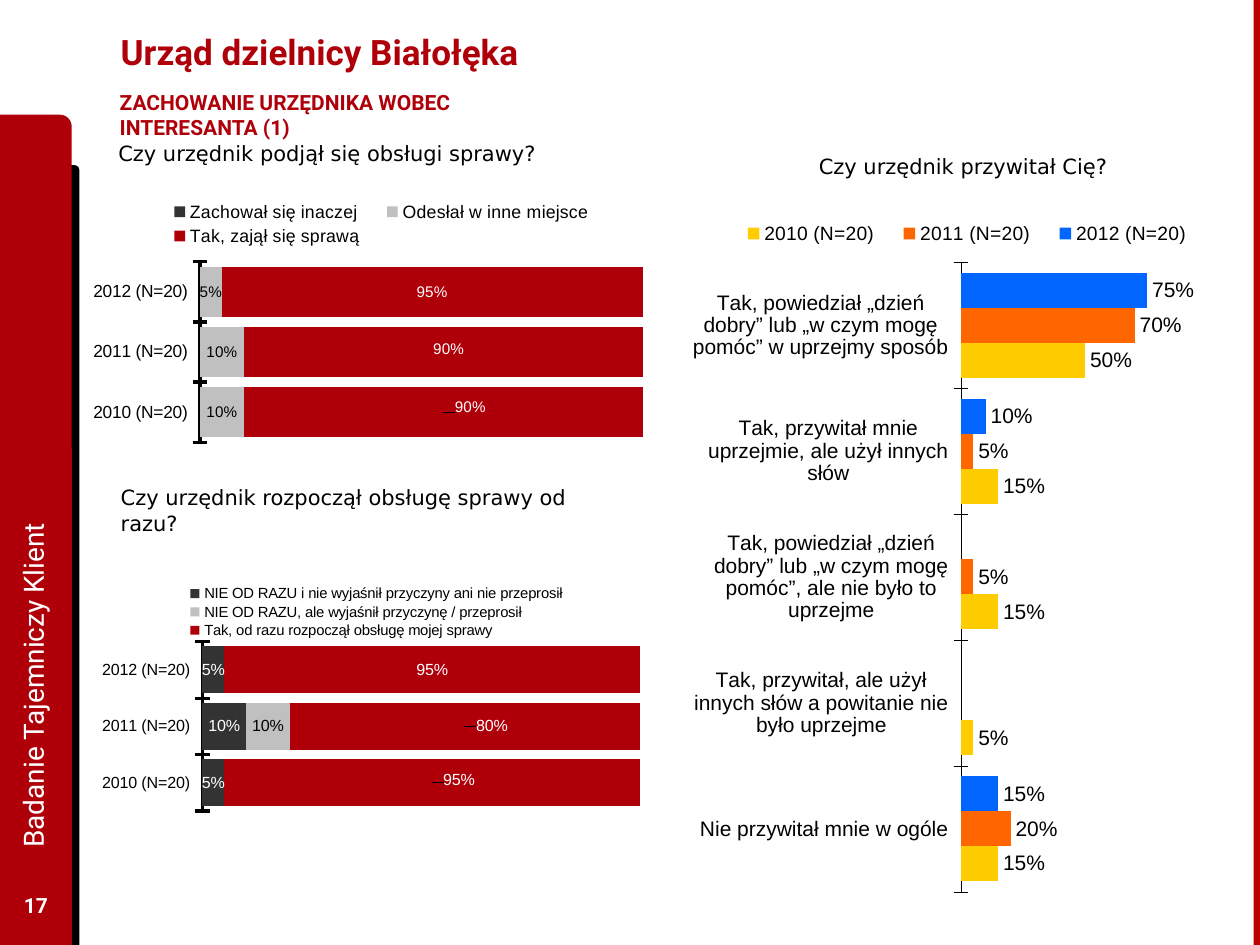
from copy import deepcopy

from lxml import etree
from pptx import Presentation, util as u
from pptx.chart.data import CategoryChartData
from pptx.dml.color import RGBColor
from pptx.enum import chart as ch, shapes, text
from pptx.oxml.ns import qn

BLACK = RGBColor(0x00, 0x00, 0x00)
WHITE = RGBColor(0xFF, 0xFF, 0xFF)
RED = RGBColor(0xAF, 0x00, 0x0A)
EDGE_RED = RGBColor(0xBD, 0x00, 0x00)
DARK = RGBColor(0x33, 0x33, 0x33)
SILVER = RGBColor(0xC0, 0xC0, 0xC0)
BLUE = RGBColor(0x00, 0x66, 0xFF)
ORANGE = RGBColor(0xFF, 0x66, 0x00)
YELLOW = RGBColor(0xFF, 0xCC, 0x00)

# Content: panels as (shape, box, colour)
PANELS = [
    (shapes.MSO_SHAPE.ROUND_1_RECTANGLE, (0.39, 1.31, 0.24, 6.19), BLACK),
    (shapes.MSO_SHAPE.ROUND_1_RECTANGLE, (0, 0.91, 0.57, 6.59), RED),
    (shapes.MSO_SHAPE.RECTANGLE, (9.95, 0, 0.05, 7.5), EDGE_RED),
]
QUESTIONS = [
    ("Czy urzędnik podjął się obsługi sprawy?", (0.84, 1.07, 3.98, 0.3)),
    ("Czy urzędnik rozpoczął obsługę sprawy od razu?", (0.86, 3.8, 3.89, 0.5)),
    ("Czy urzędnik przywitał Cię?", (6.4, 1.17, 2.86, 0.3)),
]
YEARS = ["2010 (N=20)", "2011 (N=20)", "2012 (N=20)"]
GREETINGS = [
    "Tak, powiedział „dzień dobry” lub „w czym mogę pomóc” w uprzejmy sposób",
    "Tak, przywitał mnie uprzejmie, ale użył innych słów",
    "Tak, powiedział „dzień dobry” lub „w czym mogę pomóc”, ale nie było to uprzejme",
    "Tak, przywitał, ale użył innych słów a powitanie nie było uprzejme",
    "Nie przywitał mnie w ogóle",
]

# Series are (name, values, fill, label colour); layouts are fractions of the chart;
# shifts move single labels of the last series: {point: (x, y)}
STACKED = ch.XL_CHART_TYPE.BAR_STACKED_100
TOP = ch.XL_LEGEND_POSITION.TOP
CHARTS = [
    dict(kind=ch.XL_CHART_TYPE.BAR_CLUSTERED, box=(5.49, 1.52, 4.37, 5.56),
         categories=GREETINGS, gap=60, line=0.25, reverse=True,
         sizes=dict(axis=12, legend=11, label=12),
         legend_side=ch.XL_LEGEND_POSITION.RIGHT,
         plot=(0.489, 0.103, 0.451, 0.899), legend=(0.06, 0.04, 0.88, 0.04),
         series=[("2012 (N=20)", (0.75, 0.1, None, None, 0.15), BLUE, BLACK),
                 ("2011 (N=20)", (0.7, 0.05, 0.05, None, 0.2), ORANGE, BLACK),
                 ("2010 (N=20)", (0.5, 0.15, 0.15, 0.05, 0.15), YELLOW, BLACK)],
         shifts={}),
    dict(kind=STACKED, box=(0.81, 4.61, 4.27, 1.84),
         categories=YEARS, gap=20, line=1.84, reverse=False,
         sizes=dict(axis=9.2, legend=8.5, label=9.2), legend_side=TOP,
         plot=(0.188, 0.269, 0.815, 0.736), legend=(0.15, 0.01, 0.72, 0.25),
         series=[("NIE OD RAZU i nie wyjaśnił przyczyny ani nie przeprosił",
                  (0.05, 0.1, 0.05), DARK, WHITE),
                 ("NIE OD RAZU, ale wyjaśnił przyczynę / przeprosił",
                  (None, 0.1, None), SILVER, BLACK),
                 ("Tak, od razu rozpoczął obsługę mojej sprawy",
                  (0.95, 0.8, 0.95), RED, WHITE)],
         shifts={0: (0.05, -0.01), 1: (0.05, 0)}),
    dict(kind=STACKED, box=(0.74, 1.53, 4.36, 2.06),
         categories=YEARS, gap=20, line=1.86, reverse=False,
         sizes=dict(axis=10, legend=10.2, label=8.8), legend_side=TOP,
         plot=(0.186, 0.266, 0.814, 0.696), legend=(0.1, 0.02, 0.84, 0.2),
         series=[("Zachował się inaczej", (None, None, None), DARK, WHITE),
                 ("Odesłał w inne miejsce", (0.1, 0.1, 0.05), SILVER, BLACK),
                 ("Tak, zajął się sprawą", (0.9, 0.9, 0.95), RED, WHITE)],
         shifts={0: (0.05, -0.02), 1: (0.01, -0.01)}),
]


def inches(box):
    return [u.Inches(value) for value in box]


def set_font(font, size, color, name="Arial", bold=False):
    font.size, font.name, font.bold = u.Pt(size), name, bold
    font.color.rgb = color


def add_text(slide, content, box, size=12, color=RED, name="Roboto", bold=False,
             anchor=text.MSO_ANCHOR.TOP, align=text.PP_ALIGN.LEFT,
             wrap=True, inset=0.1, rotation=0):
    shape = slide.shapes.add_textbox(*inches(box))
    shape.rotation = rotation
    frame = shape.text_frame
    frame.word_wrap, frame.vertical_anchor = wrap, anchor
    frame.margin_left = frame.margin_right = u.Inches(inset)
    paragraph = frame.paragraphs[0]
    paragraph.alignment = align
    run = paragraph.add_run()
    run.text = content
    set_font(run.font, size, color, name, bold)


def add_panel(slide, kind, box, color):
    shape = slide.shapes.add_shape(kind, *inches(box))
    shape.shadow.inherit = False
    shape.fill.solid()
    shape.fill.fore_color.rgb = color
    shape.line.fill.background()


def make_layout(**values):
    layout = etree.Element(qn("c:layout"))
    manual = etree.SubElement(layout, qn("c:manualLayout"))
    for tag, value in values.items():
        etree.SubElement(manual, qn(f"c:{tag}")).set("val", str(value))
    return layout


def place(parent, index, box, **target):
    """Give a plot area or legend a fixed place inside its chart."""
    for old in parent.findall(qn("c:layout")):
        parent.remove(old)
    x, y, w, h = box
    parent.insert(index, make_layout(**target, xMode="edge", yMode="edge",
                                     x=x, y=y, w=w, h=h))


def shift_labels(labels, shifts):
    """Move the labels of single points, keeping the format of the series."""
    element = labels._element
    shared = [deepcopy(child) for child in element]
    for position, (point, (x, y)) in enumerate(shifts.items()):
        label = etree.Element(qn("c:dLbl"))
        etree.SubElement(label, qn("c:idx")).set("val", str(point))
        label.append(make_layout(x=x, y=y))
        label.extend(deepcopy(shared))
        element.insert(position, label)


def add_bar_chart(slide, kind, box, categories, gap, line, reverse, sizes,
                  legend_side, plot, legend, series, shifts):
    data = CategoryChartData(number_format="0%")
    data.categories = categories
    for name, values, _, _ in series:
        data.add_series(name, values)
    chart = slide.shapes.add_chart(kind, *inches(box), data).chart
    chart.has_title = False
    set_font(chart.font, sizes["label"], BLACK)

    # Axes
    axis = chart.category_axis
    axis.reverse_order = reverse
    axis.major_tick_mark = ch.XL_TICK_MARK.CROSS
    set_font(axis.tick_labels.font, sizes["axis"], BLACK)
    axis.format.line.color.rgb = BLACK
    axis.format.line.width = u.Pt(line)
    scale = chart.value_axis
    scale.minimum_scale, scale.maximum_scale = 0, 1
    scale.has_major_gridlines = scale.visible = False

    # Legend and plot area
    chart.has_legend = True
    chart.legend.position = legend_side
    chart.legend.include_in_layout = False
    set_font(chart.legend.font, sizes["legend"], BLACK)
    place(chart.legend._element, 1, legend)
    place(chart._chartSpace.chart.plotArea, 0, plot, layoutTarget="inner")

    # Bars and labels
    bars = chart.plots[0]
    bars.gap_width, bars.vary_by_categories = gap, False
    bars.overlap = 100 if kind == STACKED else 0
    for bar, (_, _, fill, label_color) in zip(bars.series, series):
        bar.format.fill.solid()
        bar.format.fill.fore_color.rgb = fill
        labels = bar.data_labels
        labels.show_value = True
        labels.number_format, labels.number_format_is_linked = "0%", False
        labels.position = (ch.XL_LABEL_POSITION.CENTER if kind == STACKED
                           else ch.XL_LABEL_POSITION.OUTSIDE_END)
        set_font(labels.font, sizes["label"], label_color)
    shift_labels(labels, shifts)


def main():
    presentation = Presentation()
    presentation.slide_width, presentation.slide_height = u.Inches(10), u.Inches(7.5)
    slide = presentation.slides.add_slide(presentation.slide_layouts[6])
    middle = text.MSO_ANCHOR.MIDDLE

    for panel in PANELS:
        add_panel(slide, *panel)

    # Headings
    add_text(slide, "Urząd dzielnicy Białołęka", (0.86, 0.05, 7.77, 0.72),
             size=20, bold=True, anchor=middle)
    add_text(slide, "ZACHOWANIE URZĘDNIKA WOBEC INTERESANTA (1)",
             (0.75, 0.66, 3.85, 0.33), bold=True, wrap=False, inset=0.2)
    for question, box in QUESTIONS:
        add_text(slide, question, box, color=BLACK, name="DejaVu Sans")

    for chart in CHARTS:
        add_bar_chart(slide, **chart)

    # Side band
    add_text(slide, "17", (0, 6.98, 0.57, 0.4), color=WHITE, bold=True,
             anchor=middle, align=text.PP_ALIGN.CENTER)
    add_text(slide, "Badanie Tajemniczy Klient", (-2.62, 3.69, 5.76, 0.51),
             size=16, color=WHITE, anchor=middle, rotation=270)

    presentation.save("out.pptx")


if __name__ == "__main__":
    main()
